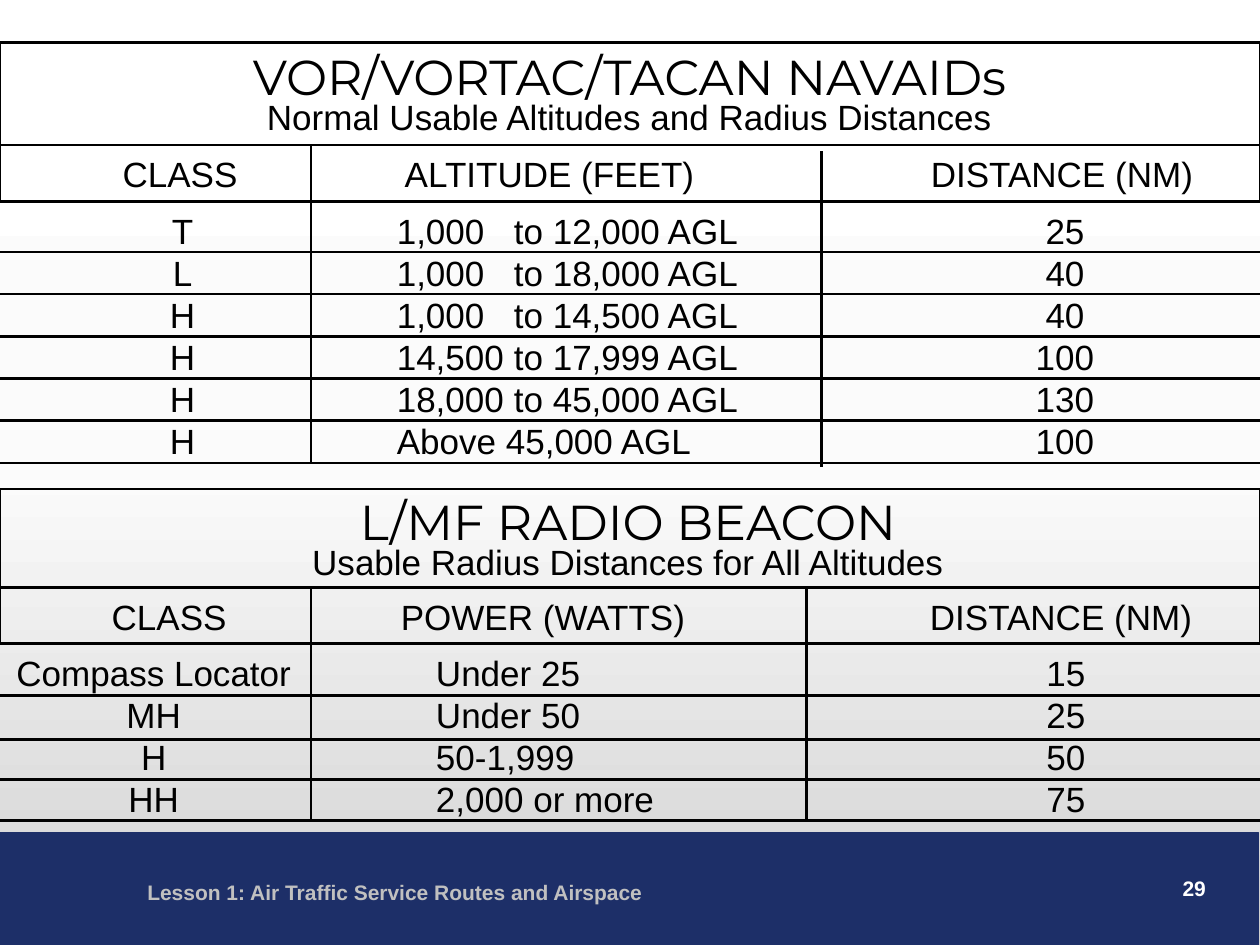
from lxml.etree import SubElement
from pptx import Presentation
from pptx.dml.color import RGBColor
from pptx.enum.shapes import MSO_CONNECTOR, MSO_SHAPE
from pptx.enum.text import MSO_ANCHOR, MSO_AUTO_SIZE, PP_ALIGN
from pptx.oxml.ns import qn
from pptx.util import Cm, Pt

COLORS = {"black": "000000", "white": "FFFFFF", "navy": "1D2F68", "silver": "C0C0C0"}
GRADIENT = [(0, "FFFFFF"), (50, "FBFBFB"), (100, "D0D0D0")]
FORMATS = {
    "title": {"name": "Montserrat", "size": Pt(28), "bold": False},
    "table": {"name": "Arial", "size": Pt(20), "bold": False},
    "footer": {"name": "Arial", "size": Pt(12), "bold": True},
}
INSET = 0.25  # left inset of a text box, in cm


def write_text(shape, box, lines, style, color="black", align=PP_ALIGN.LEFT, tabs=(), spacing=None):
    """Place a text shape and fill it; tabs are (alignment, slide x in cm)."""
    shape.left, shape.top, shape.width, shape.height = [Cm(value) for value in box]
    frame = shape.text_frame
    frame.word_wrap = True
    frame.auto_size = MSO_AUTO_SIZE.NONE
    frame.vertical_anchor = MSO_ANCHOR.TOP
    for index, line in enumerate(lines):
        paragraph = frame.add_paragraph() if index else frame.paragraphs[0]
        paragraph.alignment = align
        if tabs:
            tab_list = SubElement(paragraph._p.get_or_add_pPr(), qn("a:tabLst"))
            for kind, x in tabs:
                SubElement(tab_list, qn("a:tab"), pos=str(Cm(x - box[0] - INSET)), algn=kind)
        if spacing:
            paragraph.line_spacing = spacing
        run = paragraph.add_run()
        run.text = line
        for attribute, value in FORMATS[style].items():
            setattr(run.font, attribute, value)
        run.font.color.rgb = RGBColor.from_string(COLORS[color])


def add_rectangle(box, fill, line, weight):
    rectangle = shapes.add_shape(MSO_SHAPE.RECTANGLE, *[Cm(value) for value in box])
    rectangle.shadow.inherit = False
    if fill:
        rectangle.fill.solid()
        rectangle.fill.fore_color.rgb = RGBColor.from_string(COLORS[fill])
    else:
        rectangle.fill.background()
    rectangle.line.color.rgb = RGBColor.from_string(COLORS[line])
    rectangle.line.width = Pt(weight)


presentation = Presentation()
presentation.slide_width, presentation.slide_height = Cm(25.4), Cm(19.05)
slide = presentation.slides.add_slide(presentation.slide_layouts[5])
shapes = slide.shapes

# Background gradient, top to bottom
background = slide.background.fill
background.gradient()
background.gradient_angle = 270
stops = slide.element.find(".//" + qn("a:gsLst"))
for stop in list(stops):
    stops.remove(stop)
for position, color in GRADIENT:
    stop = SubElement(stops, qn("a:gs"), pos=str(position * 1000))
    SubElement(stop, qn("a:srgbClr"), val=color)

# Footer band
add_rectangle((-0.03, 16.79, 25.4, 2.29), "navy", "navy", 0.75)
write_text(shapes.add_textbox(0, 0, 0, 0), (2.72, 17.6, 13.28, 0.76),
           ["Lesson 1: Air Traffic Service Routes and Airspace"], "footer", "silver")
write_text(shapes.add_textbox(0, 0, 0, 0), (19.28, 17.53, 5.28, 1.27),
           ["29"], "footer", "white", PP_ALIGN.RIGHT)

# Titles
write_text(shapes.title, (0.84, 0.81, 23.7, 1.45), ["VOR/VORTAC/TACAN NAVAIDs"],
           "title", align=PP_ALIGN.CENTER)
write_text(shapes.add_textbox(0, 0, 0, 0), (0.81, 9.78, 23.7, 1.45), ["L/MF RADIO BEACON"],
           "title", align=PP_ALIGN.CENTER)

# Subtitles
for left, top, subtitle in [(0.84, 1.8, "Normal Usable Altitudes and Radius Distances"),
                            (0.81, 10.77, "Usable Radius Distances for All Altitudes")]:
    write_text(shapes.add_textbox(0, 0, 0, 0), (left, top, 23.7, 1.09), [subtitle],
               "table", align=PP_ALIGN.CENTER)

# Column heads and rows, set on tab stops
tables = [
    ((0.84, 2.95, 24.56, 1.09), [("ctr", 3.63), ("l", 8.16), ("ctr", 21.41)],
     ["\tCLASS\tALTITUDE (FEET)\tDISTANCE (NM)"]),
    ((1.4, 4.09, 22.63, 5.33), [("ctr", 3.68), ("l", 8), ("l", 10.36), ("ctr", 21.47)],
     ["\tT\t1,000\tto 12,000 AGL\t25",
      "\tL\t1,000\tto 18,000 AGL\t40",
      "\tH\t1,000\tto 14,500 AGL\t40",
      "\tH\t14,500\tto 17,999 AGL\t100",
      "\tH\t18,000\tto 45,000 AGL\t130",
      "\tH\tAbove 45,000 AGL\t100"]),
    ((0.81, 11.89, 24.59, 1.09), [("ctr", 3.41), ("l", 8.08), ("ctr", 21.39)],
     ["\tCLASS\tPOWER (WATTS)\tDISTANCE (NM)"]),
    ((0.03, 13, 25.37, 3.63), [("ctr", 3.1), ("l", 8.79), ("ctr", 21.49)],
     ["\tCompass Locator\tUnder 25\t15",
      "\tMH\tUnder 50\t25",
      "\tH\t50-1,999\t50",
      "\tHH\t2,000 or more\t75"]),
]
for box, tabs, lines in tables:
    write_text(shapes.add_textbox(0, 0, 0, 0), box, lines, "table", tabs=tabs, spacing=Pt(24))

# Frames around the heads
for top, height in [(0.86, 3.2), (9.86, 3.12)]:
    add_rectangle((0, top, 25.4, height), None, "black", 1.5)

# Row and column rules
row_rules = [2.92] + [5.08 + 0.85 * row for row in range(6)] + [11.84, 14.02, 14.91, 15.72, 16.54]
column_rules = [(6.27, 2.92, 9.32), (16.56, 3.05, 9.42), (6.27, 11.84, 16.54), (16.26, 11.84, 16.51)]
rules = [(0, y, 25.4, y) for y in row_rules] + [(x, top, x, bottom) for x, top, bottom in column_rules]
for ends in rules:
    rule = shapes.add_connector(MSO_CONNECTOR.STRAIGHT, *[Cm(value) for value in ends])
    rule.line.color.rgb = RGBColor.from_string(COLORS["black"])
    rule.line.width = Pt(1.5)
    SubElement(rule.element.spPr, qn("a:effectLst"))

presentation.save("out.pptx")
